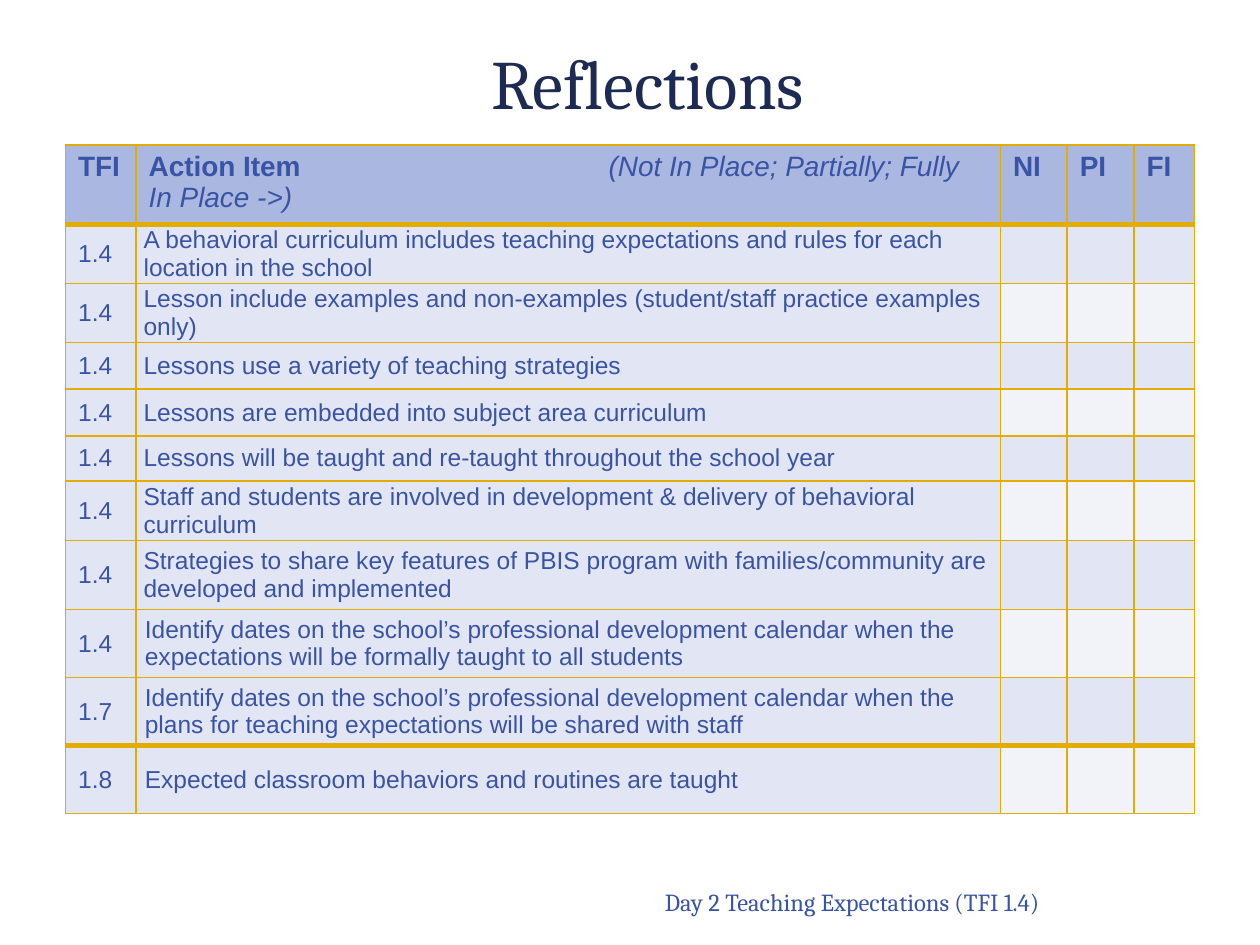
"""Build the Reflections slide with its action item checklist."""
from lxml.etree import SubElement
from pptx import Presentation
from pptx.dml.color import RGBColor
from pptx.enum.text import MSO_ANCHOR as Anchor, PP_ALIGN as Align
from pptx.oxml import parse_xml
from pptx.oxml.ns import nsdecls, qn
from pptx.util import Inches, Pt

NAVY = RGBColor(0x1D, 0x2A, 0x53)
BLUE = RGBColor(0x3A, 0x54, 0xA5)
HEADER_FILL = RGBColor(0xAA, 0xB7, 0xE1)
BAND_FILL = RGBColor(0xE2, 0xE5, 0xF4)
PALE_FILL = RGBColor(0xF1, 0xF3, 0xF9)
GOLD = RGBColor(0xE2, 0xAC, 0x00)

TITLE = "Reflections"
FOOTER = "Day 2 Teaching Expectations (TFI 1.4)"
HEADINGS = ["TFI", "Action Item", "NI", "PI", "FI"]
RATING_HINT = "\t(Not In Place; Partially; Fully In Place ->)"
ITEMS = [
    ("1.4", "A behavioral curriculum includes teaching expectations and rules for each location in the school", 0.47),
    ("1.4", "Lesson include examples and non-examples (student/staff practice examples only)", 0.47),
    ("1.4", "Lessons use a variety of teaching strategies", 0.37),
    ("1.4", "Lessons are embedded into subject area curriculum", 0.37),
    ("1.4", "Lessons will be taught and re-taught throughout the school year", 0.36),
    ("1.4", "Staff and students are involved in development & delivery of behavioral curriculum", 0.47),
    ("1.4", "Strategies to share key features of PBIS program with families/community are developed and implemented", 0.55),
    ("1.4", "Identify dates on the school’s professional development calendar when the expectations will be formally taught to all students", 0.54),
    ("1.7", "Identify dates on the school’s professional development calendar when the plans for teaching expectations will be shared with staff", 0.54),
    ("1.8", "Expected classroom behaviors and routines are taught", 0.54),
]
COLUMN_WIDTHS = [0.56, 6.86, 0.53, 0.53, 0.48]
HEADER_HEIGHT = 0.63
THICK_RULES_BELOW = (0, 9)
WIDE_MARGIN_FROM = 8


def style_font(font, size, color, name="Arial", bold=False):
    font.name, font.size, font.bold = name, Pt(size), bold
    font.color.rgb = color


def set_borders(cell, top, bottom):
    widths = {"lnL": 1, "lnR": 1, "lnT": top, "lnB": bottom}
    for position, (side, width) in enumerate(widths.items()):
        line = parse_xml(
            f'<a:{side} {nsdecls("a")} w="{Pt(width)}"><a:solidFill>'
            f'<a:srgbClr val="{GOLD}"/></a:solidFill></a:{side}>')
        cell._tc.get_or_add_tcPr().insert(position, line)


def fill_cell(cell, text, fill, row):
    cell.fill.solid()
    cell.fill.fore_color.rgb = fill
    set_borders(cell, *(3 if rule in THICK_RULES_BELOW else 1 for rule in (row - 1, row)))
    paragraph = cell.text_frame.paragraphs[0]
    if text:
        paragraph.text = text
        style_font(paragraph.runs[0].font, 14 if row else 16, BLUE, bold=row == 0)
    else:
        paragraph.font.size = Pt(14)
    cell.vertical_anchor = Anchor.MIDDLE if row else Anchor.TOP


def add_rating_hint(cell):
    paragraph = cell.text_frame.paragraphs[0]
    tabs = SubElement(paragraph._p.get_or_add_pPr(), qn("a:tabLst"))
    SubElement(tabs, qn("a:tab"), pos=str(Inches(3.65)), algn="l")
    hint = paragraph.add_run()
    hint.text = RATING_HINT
    style_font(hint.font, 16, BLUE)
    hint.font.italic = True


def add_checklist(slide):
    heights = [HEADER_HEIGHT] + [height for _, _, height in ITEMS]
    checklist = slide.shapes.add_table(
        len(heights), len(COLUMN_WIDTHS), Inches(0.52), Inches(1.15),
        Inches(sum(COLUMN_WIDTHS)), Inches(sum(heights))).table
    for column, width in zip(checklist.columns, COLUMN_WIDTHS):
        column.width = Inches(width)
    for row, height in zip(checklist.rows, heights):
        row.height = Inches(height)

    for column, heading in enumerate(HEADINGS):
        fill_cell(checklist.cell(0, column), heading, HEADER_FILL, 0)
    add_rating_hint(checklist.cell(0, 1))

    for row, (number, action, _) in enumerate(ITEMS, start=1):
        rating_fill = BAND_FILL if row % 2 else PALE_FILL
        for column, text in enumerate((number, action, "", "", "")):
            fill = BAND_FILL if text else rating_fill
            fill_cell(checklist.cell(row, column), text, fill, row)
        action_cell = checklist.cell(row, 1)
        side = Inches(0.07 if row >= WIDE_MARGIN_FROM else 0.06)
        action_cell.margin_left = action_cell.margin_right = side
        action_cell.margin_top = action_cell.margin_bottom = 0


def add_line(shape, text, align, size, color):
    frame = shape.text_frame
    frame.word_wrap = True
    frame.text = text
    frame.paragraphs[0].alignment = align
    style_font(frame.paragraphs[0].runs[0].font, size, color, "Cambria")


def main():
    deck = Presentation()
    deck.slide_width, deck.slide_height = Inches(10), Inches(7.5)
    slide = deck.slides.add_slide(deck.slide_layouts[5])

    title = slide.shapes.title
    title.left, title.top = Inches(1.32), Inches(0.3)
    title.width, title.height = Inches(7.64), Inches(0.7)
    add_line(title, TITLE, Align.CENTER, 39.6, NAVY)
    title.text_frame.vertical_anchor = Anchor.MIDDLE

    add_checklist(slide)

    footer = slide.shapes.add_textbox(Inches(3.63), Inches(6.99), Inches(4.72), Inches(0.34))
    add_line(footer, FOOTER, Align.RIGHT, 14, BLUE)
    deck.save("out.pptx")


if __name__ == "__main__":
    main()
